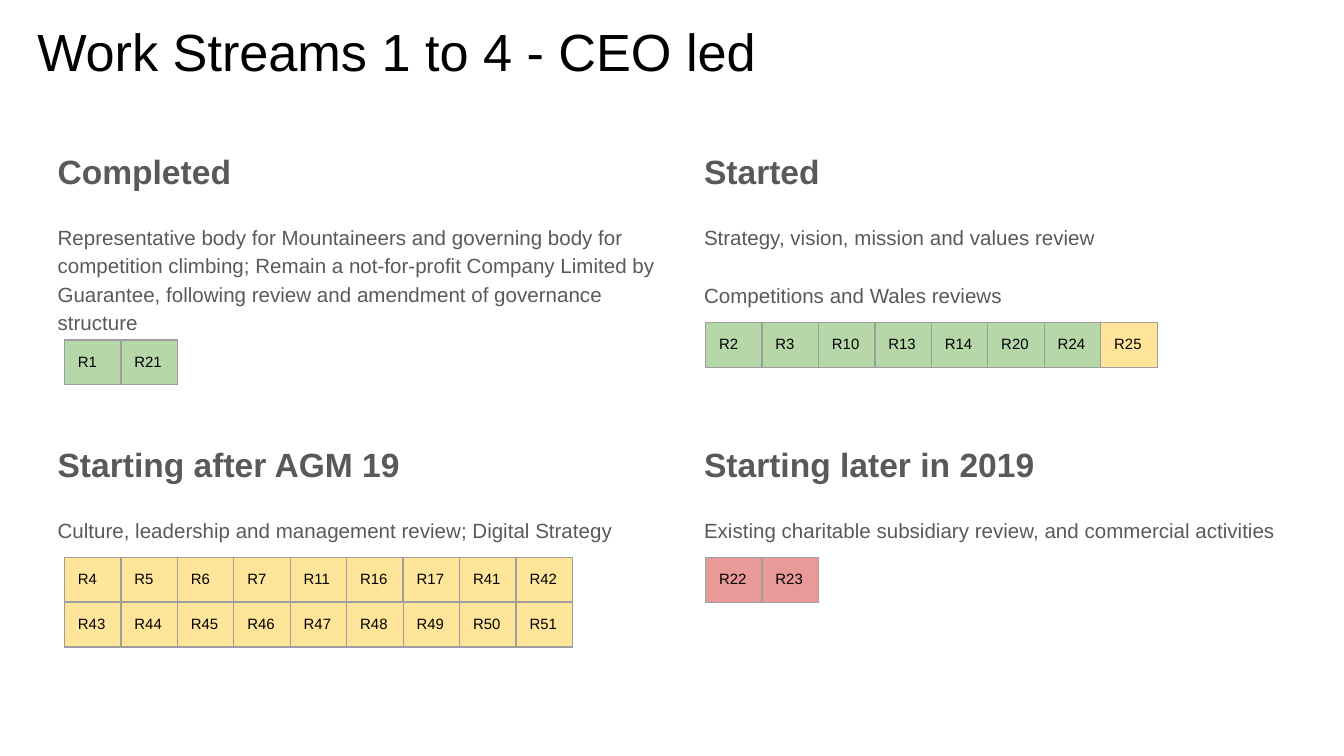
import dataclasses

import pptx
import pptx.dml.color
import pptx.enum.text
import pptx.oxml
import pptx.oxml.ns
import pptx.util

Inches = pptx.util.Inches
Pt = pptx.util.Pt


@dataclasses.dataclass(frozen=True)
class Theme:
    face: str = "Arial"
    black: str = "000000"
    grey: str = "595959"
    edge: str = "9E9E9E"
    green: str = "B6D7A8"
    amber: str = "FFE599"
    red: str = "EA9999"
    title: int = 28
    head: int = 18
    body: int = 11
    tag: int = 8


THEME = Theme()
SIDE, TALL, PAD = 0.42, 0.31, 0.1
INSETS = {"margin_" + side: Inches(PAD) for side in ("left", "top", "right", "bottom")}


def rgb(code):
    return pptx.dml.color.RGBColor.from_string(code)


def apply(item, form):
    for name, value in form.items():
        setattr(item, name, value)


def write(para, text, size, color, bold=False, form=None):
    run = para.add_run()
    run.text = text
    apply(run.font, {"name": THEME.face, "size": Pt(size), "bold": bold})
    run.font.color.rgb = rgb(color)
    apply(para, form or {})


def add_box(slide, left, top, width, height):
    frame = slide.shapes.add_textbox(
        Inches(left), Inches(top), Inches(width), Inches(height)
    ).text_frame
    top_left = {"word_wrap": True, "vertical_anchor": pptx.enum.text.MSO_ANCHOR.TOP}
    apply(frame, INSETS | top_left)
    return frame


def add_part(slide, left, top, width, head, lines):
    frame = add_box(slide, left, top, width, 2.17)
    write(frame.paragraphs[0], head, THEME.head, THEME.grey, True, {"line_spacing": 1.15})
    for line in lines:
        form = {"line_spacing": 1.15, "space_before": Pt(16)}
        write(frame.add_paragraph(), line, THEME.body, THEME.grey, form=form)


def edge_cell(cell):
    props = cell._tc.get_or_add_tcPr()
    for side in "LRTB":
        props.append(pptx.oxml.parse_xml(
            f'<a:ln{side} {pptx.oxml.ns.nsdecls("a")} w="9525"><a:solidFill>'
            f'<a:srgbClr val="{THEME.edge}"/></a:solidFill></a:ln{side}>'
        ))


def add_tags(slide, left, top, tags, fills):
    table = slide.shapes.add_table(
        1, len(tags), Inches(left), Inches(top), Inches(SIDE * len(tags)), Inches(TALL)
    ).table
    apply(table, {"first_row": False, "horz_banding": False})
    for col, tag in enumerate(tags):
        table.columns[col].width = Inches(SIDE)
        cell = table.cell(0, col)
        apply(cell, INSETS)
        edge_cell(cell)
        cell.fill.solid()
        cell.fill.fore_color.rgb = rgb(fills.get(tag, fills["all"]))
        write(cell.text_frame.paragraphs[0], tag, THEME.tag, THEME.black)


def add_strip(slide, left, top, groups, fills):
    for group in groups.split(" | "):
        tags = group.split()
        add_tags(slide, left, top, tags, fills)
        left += SIDE * len(tags)


def main():
    deck = pptx.Presentation()
    wide = Inches(10)
    apply(deck, {"slide_width": wide, "slide_height": wide * 9 // 16})
    slide = deck.slides.add_slide(deck.slide_layouts[6])

    title = add_box(slide, 0.18, 0.04, 9.32, 0.63)
    write(title.paragraphs[0], "Work Streams 1 to 4 - CEO led", THEME.title, THEME.black)

    parts = [
        (0.33, 0.98, 4.81, "Completed", [
            "Representative body for Mountaineers and governing body for "
            "competition climbing; Remain a not-for-profit Company Limited by "
            "Guarantee, following review and amendment of governance structure",
        ]),
        (5.14, 0.98, 4.66, "Started", [
            "Strategy, vision, mission and values review",
            "Competitions and Wales reviews",
        ]),
        (0.33, 3.16, 4.81, "Starting after AGM 19", [
            "Culture, leadership and management review; Digital Strategy",
        ]),
        (5.14, 3.16, 4.66, "Starting later in 2019", [
            "Existing charitable subsidiary review, and commercial activities",
        ]),
    ]
    for part in parts:
        add_part(slide, *part)

    green, amber, red = ({"all": code} for code in (THEME.green, THEME.amber, THEME.red))
    strips = [
        (0.48, 2.53, "R1 R21", green),
        (5.25, 2.4, "R2 R3 | R10 R13 | R14 R20 | R24 R25", green | {"R25": THEME.amber}),
        (0.48, 4.15, "R4 R5 | R6 R7 | R11 R16 | R17 | R41 R42", amber),
        (0.48, 4.48, "R43 | R44 R45 | R46 R47 | R48 R49 | R50 R51", amber),
        (5.25, 4.15, "R22 R23", red),
    ]
    for strip in strips:
        add_strip(slide, *strip)

    deck.save("out.pptx")


if __name__ == "__main__":
    main()
